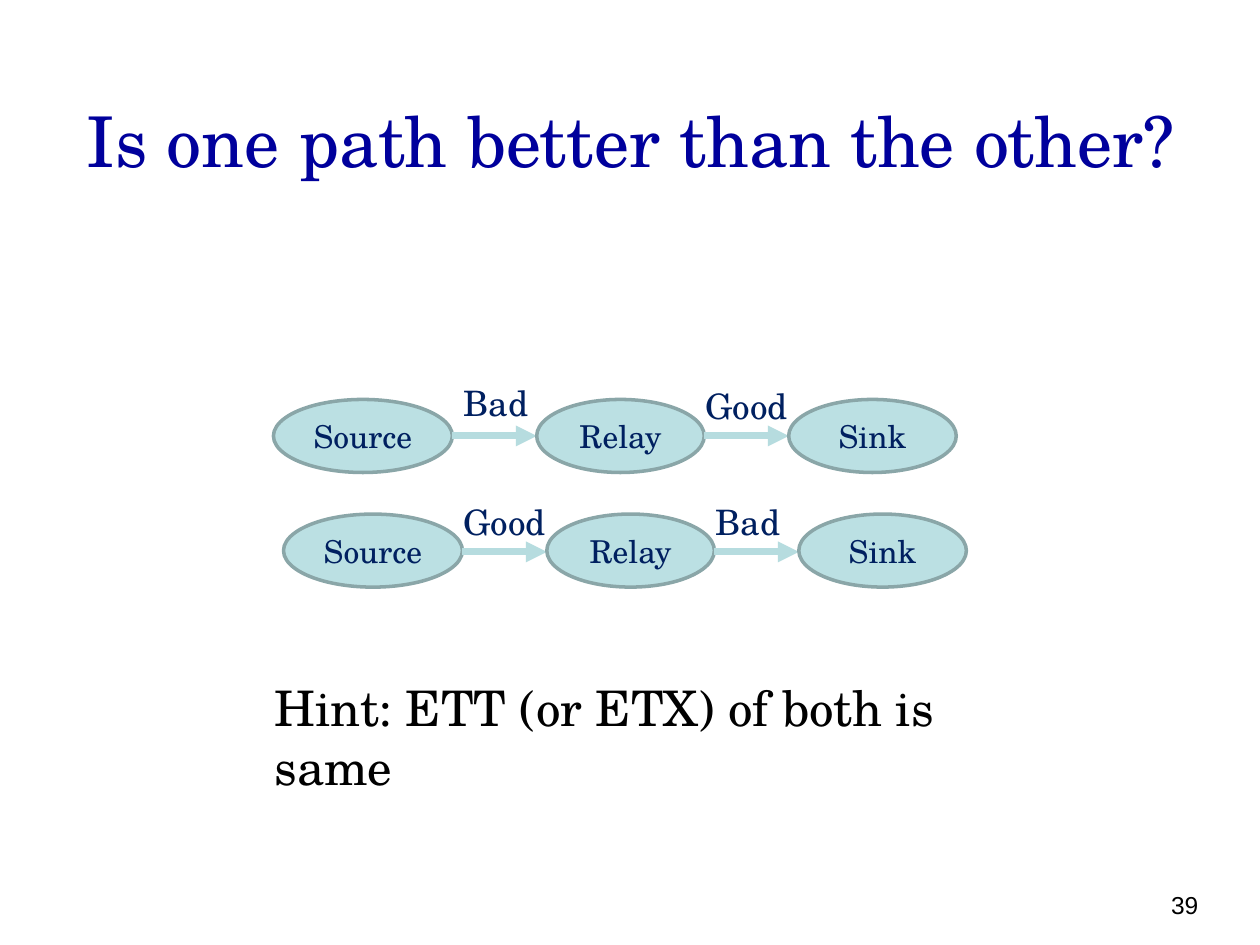
import pptx
import pptx.dml.color
import pptx.enum.shapes
import pptx.enum.text
import pptx.oxml
import pptx.oxml.ns
import pptx.util
from dataclasses import dataclass

Inches, Pt = pptx.util.Inches, pptx.util.Pt
RGB = pptx.dml.color.RGBColor.from_string
ALIGN = pptx.enum.text.PP_ALIGN
ANCHOR = pptx.enum.text.MSO_ANCHOR
FIT = pptx.enum.text.MSO_AUTO_SIZE


@dataclass
class Theme:
    serif: str = "TeX Gyre Schola"
    sans: str = "Arial"
    heading: str = "00009C"
    label: str = "002060"
    body: str = "000000"
    node_fill: str = "BBE0E3"
    node_line: str = "8AA6A8"
    arrow: str = "B6DCDF"
    title_size: int = 40
    hint_size: int = 28
    link_size: int = 20
    node_size: int = 18
    number_size: int = 14


theme = Theme()


def write(box, text, size, color, font=theme.serif, align=ALIGN.LEFT,
          anchor=ANCHOR.TOP, fit=FIT.NONE):
    frame = box.text_frame
    frame_format = {"word_wrap": True, "auto_size": fit, "vertical_anchor": anchor}
    for name, value in frame_format.items():
        setattr(frame, name, value)
    para = frame.paragraphs[0]
    para.alignment = align
    span = para.add_run()
    span.text = text
    for name, value in {"name": font, "size": Pt(size)}.items():
        setattr(span.font, name, value)
    span.font.color.rgb = RGB(color)


deck = pptx.Presentation()
deck.slide_width, deck.slide_height = Inches(10), Inches(7.5)
page = deck.slides.add_slide(deck.slide_layouts[5])

# Title
title = page.shapes.title
title_place = {"left": 0.42, "top": 0.38, "width": 9.17, "height": 1.45}
for name, value in title_place.items():
    setattr(title, name, Inches(value))
write(title, "Is one path better than the other?", theme.title_size, theme.heading,
      align=ALIGN.CENTER, anchor=ANCHOR.MIDDLE)

# Two paths: left, top, arrow height, then (quality, label left, top, width) per link
paths = [
    (2.17, 3.17, 3.46, [("Bad", 3.58, 2.98, 0.75), ("Good", 5.5, 3.0, 1.08)]),
    (2.25, 4.08, 4.38, [("Good", 3.58, 3.92, 1.08), ("Bad", 5.58, 3.92, 0.75)]),
]
nodes = [("Source", 1.42), ("Relay", 1.33), ("Sink", 1.33)]
node_height, gap = 0.58, 0.67

for left, top, arrow_y, links in paths:
    # Nodes, with an arrow from each to the next
    for index, (name, width) in enumerate(nodes):
        node = page.shapes.add_shape(
            pptx.enum.shapes.MSO_SHAPE.OVAL,
            Inches(left), Inches(top), Inches(width), Inches(node_height))
        node.shadow.inherit = False
        node.fill.solid()
        node.fill.fore_color.rgb = RGB(theme.node_fill)
        node.line.color.rgb = RGB(theme.node_line)
        node.line.width = Pt(2)
        write(node, name, theme.node_size, theme.label,
              align=ALIGN.CENTER, anchor=ANCHOR.MIDDLE)
        left += width
        if index < len(links):
            arrow = page.shapes.add_connector(
                pptx.enum.shapes.MSO_CONNECTOR.STRAIGHT,
                Inches(left), Inches(arrow_y), Inches(left + gap), Inches(arrow_y))
            arrow.line.color.rgb = RGB(theme.arrow)
            arrow.line.width = Pt(4)
            head = pptx.oxml.parse_xml(
                f'<a:tailEnd {pptx.oxml.ns.nsdecls("a")} type="triangle"/>')
            arrow.line._get_or_add_ln().append(head)
            arrow.element.spPr.append(
                pptx.oxml.parse_xml(f'<a:effectLst {pptx.oxml.ns.nsdecls("a")}/>'))
            left += gap

    # Link quality labels
    for quality, label_left, label_top, label_width in links:
        label = page.shapes.add_textbox(
            Inches(label_left), Inches(label_top), Inches(label_width), Inches(0.44))
        write(label, quality, theme.link_size, theme.label, fit=FIT.SHAPE_TO_FIT_TEXT)

# Hint
hint = page.shapes.add_textbox(Inches(2.08), Inches(5.33), Inches(6.42), Inches(0.57))
write(hint, "Hint: ETT (or ETX) of both is same", theme.hint_size, theme.body,
      fit=FIT.SHAPE_TO_FIT_TEXT)

# Page number
number = page.shapes.add_textbox(Inches(7.28), Inches(6.83), Inches(2.33), Inches(0.52))
write(number, "39", theme.number_size, theme.body, font=theme.sans,
      align=ALIGN.RIGHT, anchor=ANCHOR.BOTTOM)

deck.save("out.pptx")
